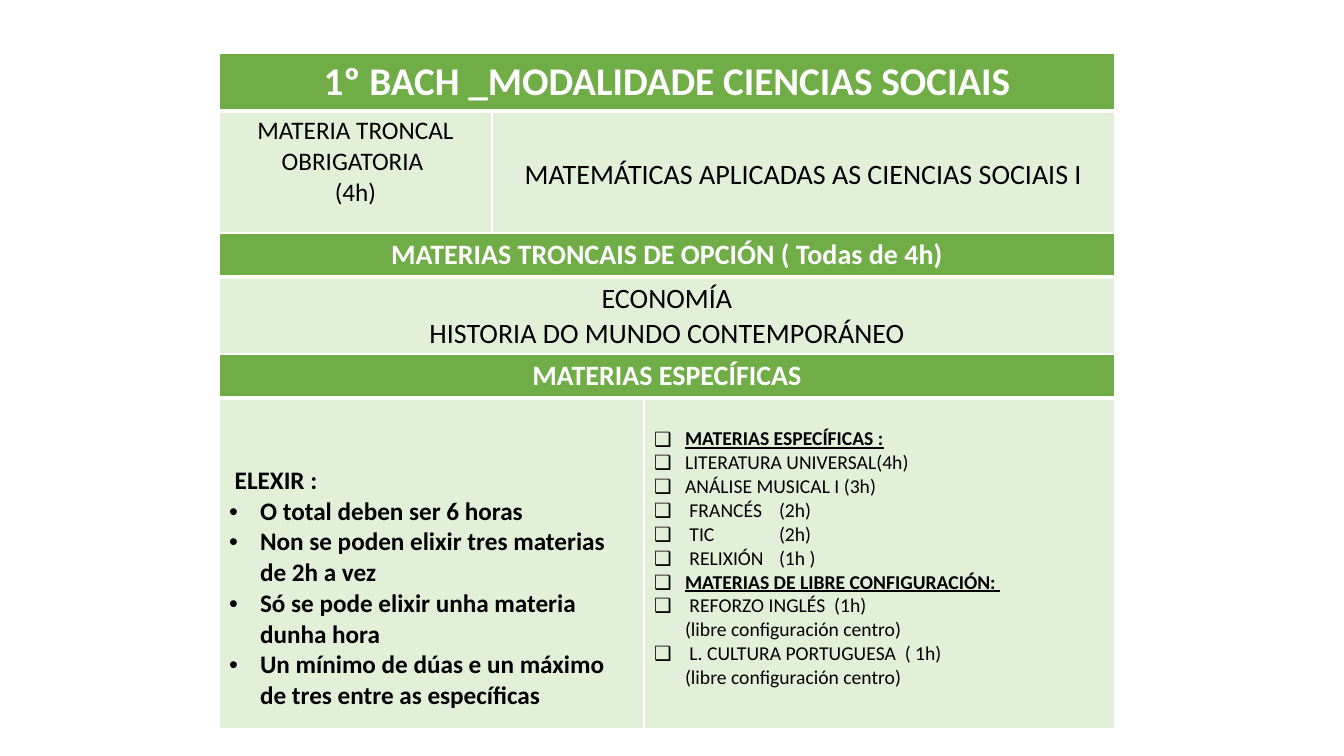
from lxml.etree import SubElement
from pptx import Presentation
from pptx.dml.color import RGBColor
from pptx.enum.text import MSO_ANCHOR, PP_ALIGN
from pptx.oxml.ns import qn
from pptx.util import Pt

PX = 914400 / 100.8
GREEN, PALE, WHITE, BLACK = "70AD47", "E2F0D9", "FFFFFF", "000000"
LEFT, TOP, WIDTH = 219, 53, 896
INDENT, TAB = 31, 125
DOT, BOX = "•", "❑"

# Paragraphs: (text, bullet, style); style holds b = bold, u = underline, i = indented
rules = [(" ELEXIR :", "", "b")] + [(t, DOT, "bi") for t in (
    "O total deben ser 6 horas",
    "Non se poden elixir tres materias de 2h a vez",
    "Só se pode elixir unha materia dunha hora",
    "Un mínimo de dúas e un máximo de tres entre as específicas")]
subjects = [
    ("MATERIAS ESPECÍFICAS :", BOX, "bui"),
    ("LITERATURA UNIVERSAL(4h)", BOX, "i"),
    ("ANÁLISE MUSICAL I (3h)", BOX, "i"),
    (" FRANCÉS\t(2h)", BOX, "i"),
    (" TIC\t(2h)", BOX, "i"),
    (" RELIXIÓN\t(1h )", BOX, "i"),
    ("MATERIAS DE LIBRE CONFIGURACIÓN: ", BOX, "bui"),
    (" REFORZO INGLÉS  (1h)", BOX, "i"),
    ("(libre configuración centro)", "", "i"),
    (" L. CULTURA PORTUGUESA  ( 1h)", BOX, "i"),
    ("(libre configuración centro)", "", "i"),
]
required = [("MATERIA TRONCAL OBRIGATORIA ", "", ""), ("(4h)", "", "")]
maths = [("MATEMÁTICAS APLICADAS AS CIENCIAS SOCIAIS I", "", "")]
options = [("ECONOMÍA", "", ""), ("HISTORIA DO MUNDO CONTEMPORÁNEO", "", "")]

# Sections: title, title size, row heights, first column width, body cells
# Body cell: paragraphs, size, alignment, anchor, top margin
CENTER, START = PP_ALIGN.CENTER, PP_ALIGN.LEFT
UP, MID = MSO_ANCHOR.TOP, MSO_ANCHOR.MIDDLE
sections = [
    ("1º BACH _MODALIDADE CIENCIAS SOCIAIS", 28, (58, 122), 273,
     [(required, 18, CENTER, UP, 5), (maths, 20, CENTER, MID, 10)]),
    ("MATERIAS TRONCAIS DE OPCIÓN ( Todas de 4h)", 20, (43, 78), WIDTH,
     [(options, 20, CENTER, UP, 5)]),
    ("MATERIAS ESPECÍFICAS", 20, (44, 330), 425,
     [(rules, 18, START, UP, 67), (subjects, 14, START, UP, 29)]),
]


def px(n):
    return round(n * PX)


def rgb(color):
    return RGBColor.from_string(color)


def add_borders(cell, bottom):
    tcPr = cell._tc.get_or_add_tcPr()
    for i, (side, width) in enumerate(
            (("lnL", 1), ("lnR", 1), ("lnT", 1), ("lnB", bottom))):
        ln = tcPr.makeelement(qn("a:" + side), {"w": str(Pt(width))})
        fill = SubElement(ln, qn("a:solidFill"))
        SubElement(fill, qn("a:srgbClr"), val=WHITE)
        tcPr.insert(i, ln)


def set_indent(p, bullet, tabbed):
    pPr = p._p.get_or_add_pPr()
    pPr.set("marL", str(px(INDENT)))
    pPr.set("indent", str(-px(INDENT) if bullet else 0))
    if bullet:
        SubElement(pPr, qn("a:buFont"), typeface="Arial")
        SubElement(pPr, qn("a:buChar"), char=bullet)
    if tabbed:
        tabs = SubElement(pPr, qn("a:tabLst"))
        SubElement(tabs, qn("a:tab"), pos=str(px(TAB)), algn="l")


def fill_cell(cell, paragraphs, size, align, anchor, top, fill, color, bottom=1):
    cell.fill.solid()
    cell.fill.fore_color.rgb = rgb(fill)
    cell.vertical_anchor = anchor
    cell.margin_top = px(top)
    add_borders(cell, bottom)
    tf = cell.text_frame
    for i, (text, bullet, style) in enumerate(paragraphs):
        p = tf.add_paragraph() if i else tf.paragraphs[0]
        p.alignment = align
        if "i" in style:
            set_indent(p, bullet, "\t" in text)
        r = p.add_run()
        r.text = text
        r.font.name = "Calibri"
        r.font.size = Pt(size)
        r.font.bold = "b" in style
        r.font.underline = "u" in style
        r.font.color.rgb = rgb(color)


prs = Presentation()
prs.slide_width, prs.slide_height = px(1344), px(756)
s = prs.slides.add_slide(prs.slide_layouts[6])

# One table per section, stacked from the top
y = TOP
for title, size, heights, first, body in sections:
    widths = [first, WIDTH - first][:len(body)]
    table = s.shapes.add_table(2, len(body), px(LEFT), px(y),
                               px(WIDTH), px(sum(heights))).table
    table.first_row = table.horz_banding = False
    for col, w in zip(table.columns, widths):
        col.width = px(w)
    for row, h in zip(table.rows, heights):
        row.height = px(h)
    # Green title row across all columns
    if len(body) > 1:
        table.cell(0, 0).merge(table.cell(0, len(body) - 1))
    fill_cell(table.cell(0, 0), [(title, "", "b")], size, CENTER, UP, 5,
              GREEN, WHITE, bottom=3)
    # Pale body row
    for c, content in enumerate(body):
        fill_cell(table.cell(1, c), *content, PALE, BLACK)
    y += sum(heights)

prs.save("out.pptx")
